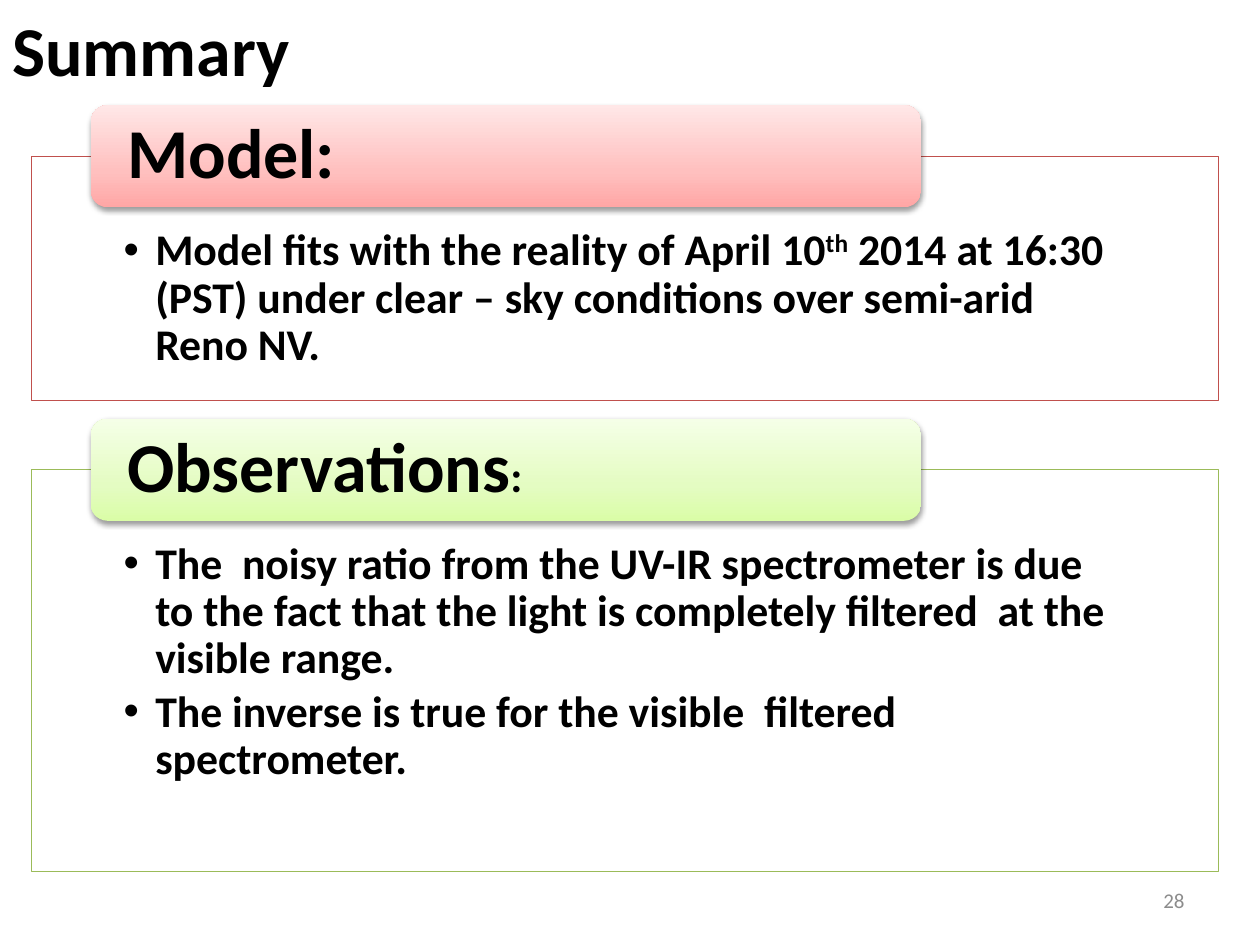
import copy
from dataclasses import dataclass

import lxml.etree
import pptx
import pptx.dml.color
import pptx.enum.shapes
import pptx.enum.text
import pptx.oxml.ns
import pptx.util

Cm, Pt = pptx.util.Cm, pptx.util.Pt
RGB = pptx.dml.color.RGBColor.from_string
qn = pptx.oxml.ns.qn
ALIGN = pptx.enum.text.PP_ALIGN
ANCHOR = pptx.enum.text.MSO_ANCHOR


@dataclass(frozen=True)
class Theme:
    font: str = "Calibri"
    ink: str = "000000"
    muted: str = "8C8C8C"
    paper: str = "FFFFFF"
    red: str = "C0504D"
    red_stops: tuple = ("FFA6A5", "FFC0BF", "FFE7E7")
    green: str = "9BBB59"
    green_stops: tuple = ("DAFDA7", "E4FCC2", "F5FFE7")
    heading: int = 40
    body: int = 25
    small: int = 12


class SummarySlide:
    def __init__(self, prs, theme):
        self.theme = theme
        self.slide = prs.slides.add_slide(prs.slide_layouts[3])  # Two Content

    def place(self, sp, left, top, width, height):
        sp.left, sp.top, sp.width, sp.height = map(Cm, (left, top, width, height))

    def frame_text(self, sp, anchor, insets=(0.25, 0.13, 0.25, 0.13)):
        tf = sp.text_frame
        tf.word_wrap = True
        tf.auto_size = pptx.enum.text.MSO_AUTO_SIZE.NONE
        tf.vertical_anchor = anchor
        tf.margin_left, tf.margin_top, tf.margin_right, tf.margin_bottom = map(Cm, insets)
        return tf

    def format_run(self, r, size, color, bold=True):
        r.font.name = self.theme.font
        r.font.size = Pt(size)
        r.font.bold = bold
        r.font.color.rgb = RGB(color)

    def title(self, text):
        sp = self.slide.shapes.title
        self.place(sp, 0, 0, 24.97, 1.96)
        p = self.frame_text(sp, ANCHOR.TOP).paragraphs[0]
        p.text = text
        p.alignment = ALIGN.LEFT
        self.format_run(p.runs[0], self.theme.heading, self.theme.ink)

    def panel(self, idx, top, height, color, items):
        """Outlined bullet list; each item is a list of (text, superscript)."""
        sp = self.slide.placeholders[idx]
        self.place(sp, 0.64, top, 23.93, height)
        sp.fill.solid()
        sp.fill.fore_color.rgb = RGB(self.theme.paper)
        sp.line.color.rgb = RGB(color)
        sp.line.width = Pt(0.75)
        tf = self.frame_text(sp, ANCHOR.TOP, (1.85, 1.45, 1.85, 0.48))
        for i, item in enumerate(items):
            p = tf.add_paragraph() if i else tf.paragraphs[0]
            p.line_spacing = 0.9
            p.space_before, p.space_after = Pt(0), Pt(3.75)
            pPr = p._p.get_or_add_pPr()
            pPr.set("marL", str(Cm(0.64)))
            pPr.set("indent", str(-Cm(0.64)))
            for text, superscript in item:
                r = p.add_run()
                r.text = text
                self.format_run(r, self.theme.body, self.theme.ink)
                if superscript:
                    r._r.get_or_add_rPr().set("baseline", "30000")

    def tab(self, panel_top, stops, runs):
        """Rounded heading straddling a panel's top edge."""
        sp = self.slide.shapes.add_shape(
            pptx.enum.shapes.MSO_SHAPE.ROUNDED_RECTANGLE,
            Cm(1.83), Cm(panel_top - 1.03), Cm(16.74), Cm(2.06))
        sp.line.fill.background()
        self.gradient(sp, stops)
        self.soft_shadow(sp)
        p = self.frame_text(sp, ANCHOR.MIDDLE, (0.64, 0, 0.64, 0)).paragraphs[0]
        p.alignment = ALIGN.LEFT
        p.line_spacing = 0.9
        for text, size, bold in runs:
            r = p.add_run()
            r.text = text
            self.format_run(r, size, self.theme.ink, bold)

    def gradient(self, sp, colors):
        sp.fill.gradient()
        sp.fill.gradient_angle = 90
        gs_list = sp._element.spPr.find(".//" + qn("a:gsLst"))
        gs_list.append(copy.deepcopy(gs_list[-1]))
        for stop, position, color in zip(sp.fill.gradient_stops, (0, 0.35, 1), colors):
            stop.position = position
            stop.color.rgb = RGB(color)

    def soft_shadow(self, sp):
        sp.shadow.inherit = False
        effects = sp._element.spPr.find(qn("a:effectLst"))
        shadow = lxml.etree.SubElement(
            effects, qn("a:outerShdw"), blurRad="40000", dist="20000",
            dir="5400000", rotWithShape="0")
        color = lxml.etree.SubElement(shadow, qn("a:srgbClr"), val=self.theme.ink)
        lxml.etree.SubElement(color, qn("a:alpha"), val="38000")

    def page_number(self, text):
        sp = self.slide.shapes.add_textbox(Cm(18.2), Cm(17.65), Cm(5.93), Cm(1.01))
        p = self.frame_text(sp, ANCHOR.MIDDLE).paragraphs[0]
        p.text = text
        p.alignment = ALIGN.RIGHT
        self.format_run(p.runs[0], self.theme.small, self.theme.muted, bold=False)


def main():
    prs = pptx.Presentation()
    prs.slide_width, prs.slide_height = Cm(25.4), Cm(19.05)
    theme = Theme()
    s = SummarySlide(prs, theme)
    s.title("Summary")

    # Model section
    model_top = 3.15
    s.panel(1, model_top, 4.93, theme.red, [[
        ("Model fits with the reality of April 10", False),
        ("th", True),
        (" 2014 at 16:30 (PST) under clear – sky conditions over semi-arid Reno NV.", False),
    ]])
    s.tab(model_top, theme.red_stops, [("Model:", theme.heading, True)])

    # Observations section
    observations_top = 9.47
    s.panel(2, observations_top, 8.1, theme.green, [
        [("The  noisy ratio from the UV-IR spectrometer is due to the fact that "
          "the light is completely filtered  at the visible range.", False)],
        [("The inverse is true for the visible  filtered spectrometer.", False)],
    ])
    s.tab(observations_top, theme.green_stops,
          [("Observations", theme.heading, True), (":", theme.body, True)])

    # Footer
    s.page_number("28")
    prs.save("out.pptx")


if __name__ == "__main__":
    main()
